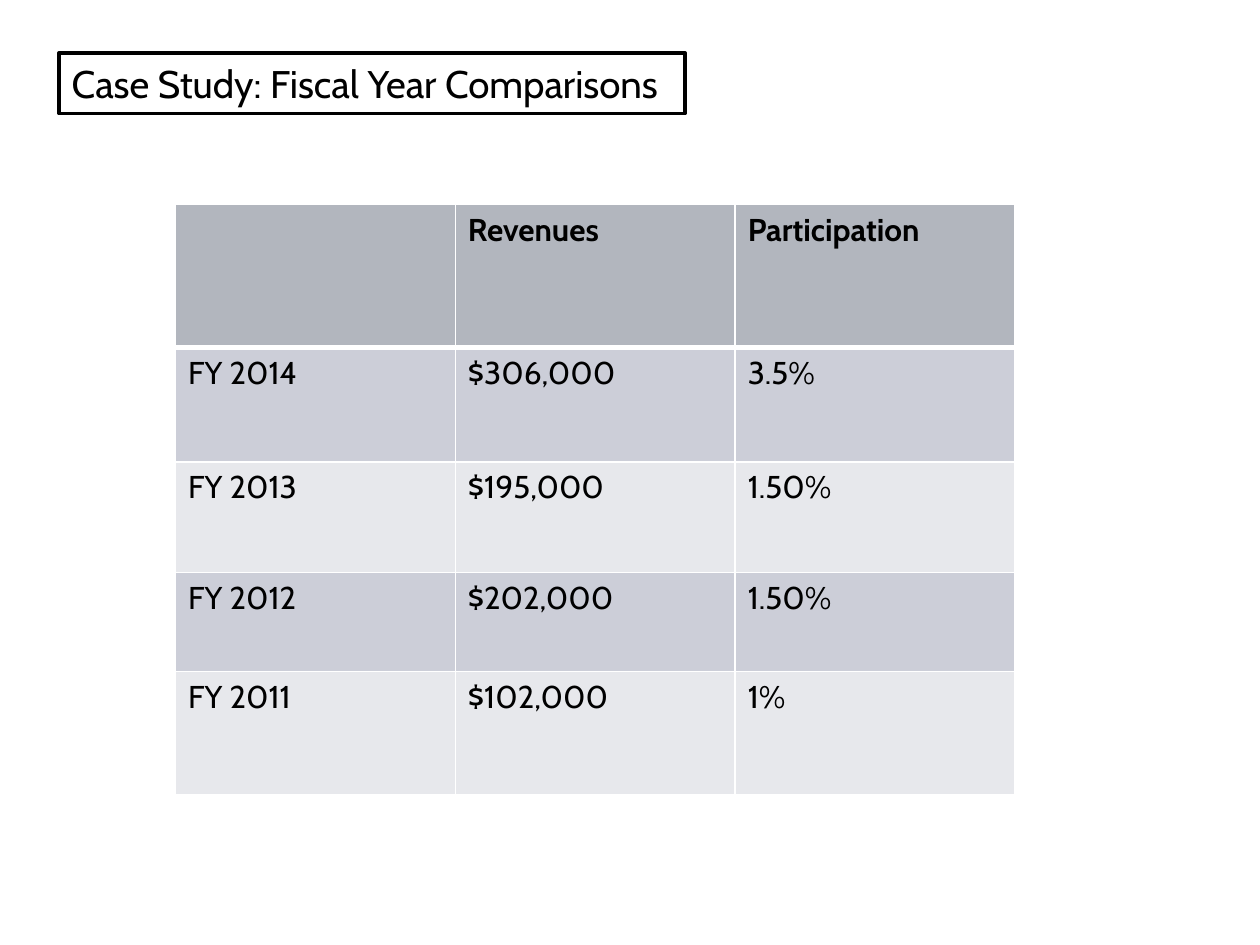
from pptx import Presentation
from pptx.dml.color import RGBColor
from pptx.enum.text import MSO_ANCHOR as Anchor, MSO_AUTO_SIZE as AutoSize, PP_ALIGN as Align
from pptx.oxml import parse_xml
from pptx.oxml.ns import nsdecls
from pptx.util import Cm, Pt


def color(value):
    return RGBColor.from_string(value)


class Deck:
    font = "Cabin"
    ink = "000000"
    paper = "FFFFFF"
    header_fill = "B2B6BE"
    band_fills = ("CCCED8", "E7E8EC")

    def __init__(self, width, height):
        self.presentation = Presentation()
        self.presentation.slide_width = Cm(width)
        self.presentation.slide_height = Cm(height)
        self.slide = self.presentation.slides.add_slide(self.presentation.slide_layouts[5])

    def add_text(self, paragraph, text, size, bold=False):
        paragraph.alignment = Align.LEFT
        run = paragraph.add_run()
        run.text = text
        run.font.name = self.font
        run.font.size = Pt(size)
        run.font.bold = bold
        run.font.color.rgb = color(self.ink)

    def title(self, text, left, top, width, height):
        heading = self.slide.shapes.title
        heading.left, heading.top = Cm(left), Cm(top)
        heading.width, heading.height = Cm(width), Cm(height)
        heading.fill.solid()
        heading.fill.fore_color.rgb = color(self.paper)
        heading.line.color.rgb = color(self.ink)
        heading.line.width = Pt(2)
        frame = heading.text_frame
        frame.auto_size = AutoSize.NONE
        frame.word_wrap = True
        frame.vertical_anchor = Anchor.MIDDLE
        self.add_text(frame.paragraphs[0], text, 22)

    def border(self, cell, **widths):
        properties = cell._tc.get_or_add_tcPr()
        for position, side in enumerate("LRTB"):
            width = Pt(widths.get(side, 1))
            properties.insert(position, parse_xml(
                f'<a:ln{side} {nsdecls("a")} w="{width}"><a:solidFill>'
                f'<a:srgbClr val="{self.paper}"/></a:solidFill></a:ln{side}>'))

    def table(self, records, left, top, column_width, row_heights):
        columns = len(records[0])
        grid = self.slide.shapes.add_table(
            len(records), columns, Cm(left), Cm(top),
            Cm(column_width * columns), Cm(sum(row_heights))).table
        for column in grid.columns:
            column.width = Cm(column_width)
        for index, (record, height) in enumerate(zip(records, row_heights)):
            grid.rows[index].height = Cm(height)
            header = index == 0
            fill = self.header_fill if header else self.band_fills[(index - 1) % 2]
            rule = {0: {"B": 3}, 1: {"T": 3}}.get(index, {})
            for cell, text in zip(grid.rows[index].cells, record):
                cell.fill.solid()
                cell.fill.fore_color.rgb = color(fill)
                self.border(cell, **rule)
                if text:
                    self.add_text(cell.text_frame.paragraphs[0], text, 18, header)


def main():
    deck = Deck(25.4, 19.05)
    deck.title("Case Study: Fiscal Year Comparisons", 1.19, 1.07, 12.62, 1.22)
    fiscal_years = [
        ("", "Revenues", "Participation"),
        ("FY 2014", "$306,000", "3.5%"),
        ("FY 2013", "$195,000", "1.50%"),
        ("FY 2012", "$202,000", "1.50%"),
        ("FY 2011", "$102,000", "1%"),
    ]
    deck.table(fiscal_years, 3.54, 4.12, 5.64, (2.88, 2.31, 2.23, 2, 2.49))
    deck.presentation.save("out.pptx")


if __name__ == "__main__":
    main()
